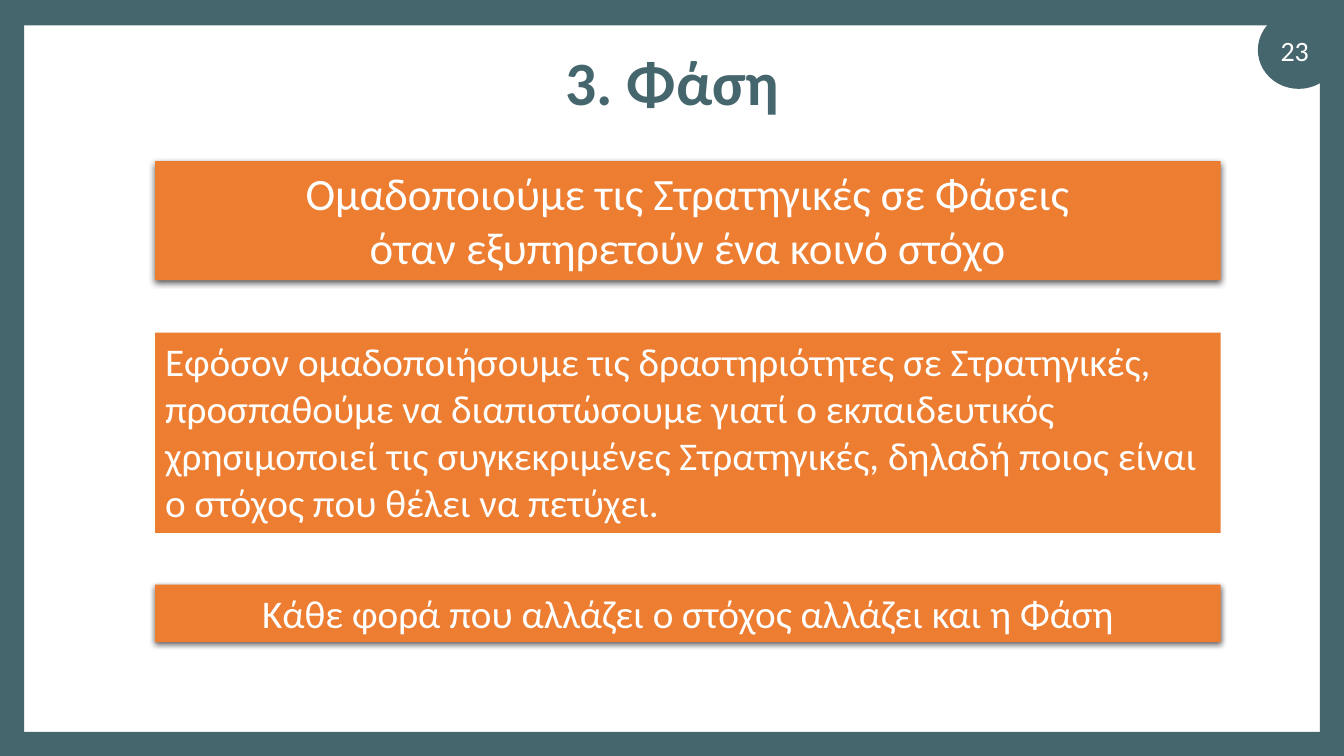
from lxml import etree
from pptx import Presentation
from pptx.dml.color import RGBColor
from pptx.enum.shapes import MSO_SHAPE
from pptx.enum.text import MSO_ANCHOR, PP_ALIGN
from pptx.oxml.ns import qn
from pptx.util import Cm, Pt

TEAL = RGBColor(0x46, 0x66, 0x6D)
ORANGE = RGBColor(0xED, 0x7D, 0x31)
WHITE = RGBColor(0xFF, 0xFF, 0xFF)
RECT, OVAL = MSO_SHAPE.RECTANGLE, MSO_SHAPE.OVAL
LEFT, CENTER = PP_ALIGN.LEFT, PP_ALIGN.CENTER
TOP, MIDDLE = MSO_ANCHOR.TOP, MSO_ANCHOR.MIDDLE
FONT = "Calibri"

WIDTH, HEIGHT, BORDER = 33.87, 19.05, 0.61

prs = Presentation()
prs.slide_width, prs.slide_height = Cm(WIDTH), Cm(HEIGHT)
s = prs.slides.add_slide(prs.slide_layouts[6])


def add_filled(kind, box, color):
    sp = s.shapes.add_shape(kind, *(Cm(v) for v in box))
    sp.shadow.inherit = False
    sp.fill.solid()
    sp.fill.fore_color.rgb = color
    sp.line.fill.background()
    return sp


def write(sp, lines, size, color, align, anchor, bold=False, spacing=1.0):
    """Put one paragraph per line into the shape."""
    tf = sp.text_frame
    tf.word_wrap = True
    tf.vertical_anchor = anchor
    for i, line in enumerate(lines):
        p = tf.paragraphs[0] if i == 0 else tf.add_paragraph()
        p.alignment = align
        p.line_spacing = spacing
        r = p.add_run()
        r.text = line
        r.font.name = FONT
        r.font.size = Pt(size)
        r.font.bold = bold
        r.font.color.rgb = color


# Frame and page-number badge
add_filled(OVAL, (31.7, 0.28, 2.06, 1.96), TEAL)
for box in (
    (0, 0, WIDTH, 0.64),
    (0, HEIGHT - BORDER, WIDTH, BORDER),
    (WIDTH - BORDER, 0.3, BORDER, 18.44),
    (0, 0.3, BORDER, 18.44),
):
    add_filled(RECT, box, TEAL)

# Title and page number
for box, text, size, color, bold, spacing in (
    ((2.34, 1.02, 29.21, 2.26), "3. Φάση", 44, TEAL, True, 0.9),
    ((31.6, 0.76, 2.06, 1.02), "23", 20, WHITE, False, 1.0),
):
    sp = s.shapes.add_textbox(*(Cm(v) for v in box))
    write(sp, [text], size, color, CENTER, MIDDLE, bold, spacing)

# Orange panels: top, height, size, alignment, shadow, lines
panels = (
    (4.06, 3.0, 32, CENTER, True,
     ["Ομαδοποιούμε τις Στρατηγικές σε Φάσεις",
      "όταν εξυπηρετούν ένα κοινό στόχο"]),
    (8.38, 5.05, 28, LEFT, False,
     ["Εφόσον ομαδοποιήσουμε τις δραστηριότητες σε Στρατηγικές, "
      "προσπαθούμε να διαπιστώσουμε γιατί ο εκπαιδευτικός "
      "χρησιμοποιεί τις συγκεκριμένες Στρατηγικές, δηλαδή ποιος είναι "
      "ο στόχος που θέλει να πετύχει."]),
    (14.73, 1.45, 28, CENTER, True,
     ["Κάθε φορά που αλλάζει ο στόχος αλλάζει και η Φάση"]),
)
for top, height, size, align, shadow, lines in panels:
    sp = add_filled(RECT, (3.91, top, 26.85, height), ORANGE)
    write(sp, lines, size, WHITE, align, TOP)
    if shadow:
        effects = sp._element.spPr.find(qn("a:effectLst"))
        outer = etree.SubElement(
            effects, qn("a:outerShdw"), blurRad=str(Pt(4.5)),
            dist=str(Pt(1.5)), dir="5400000", algn="ctr", rotWithShape="0")
        black = etree.SubElement(outer, qn("a:srgbClr"), val="000000")
        etree.SubElement(black, qn("a:alpha"), val="63000")

prs.save("out.pptx")
